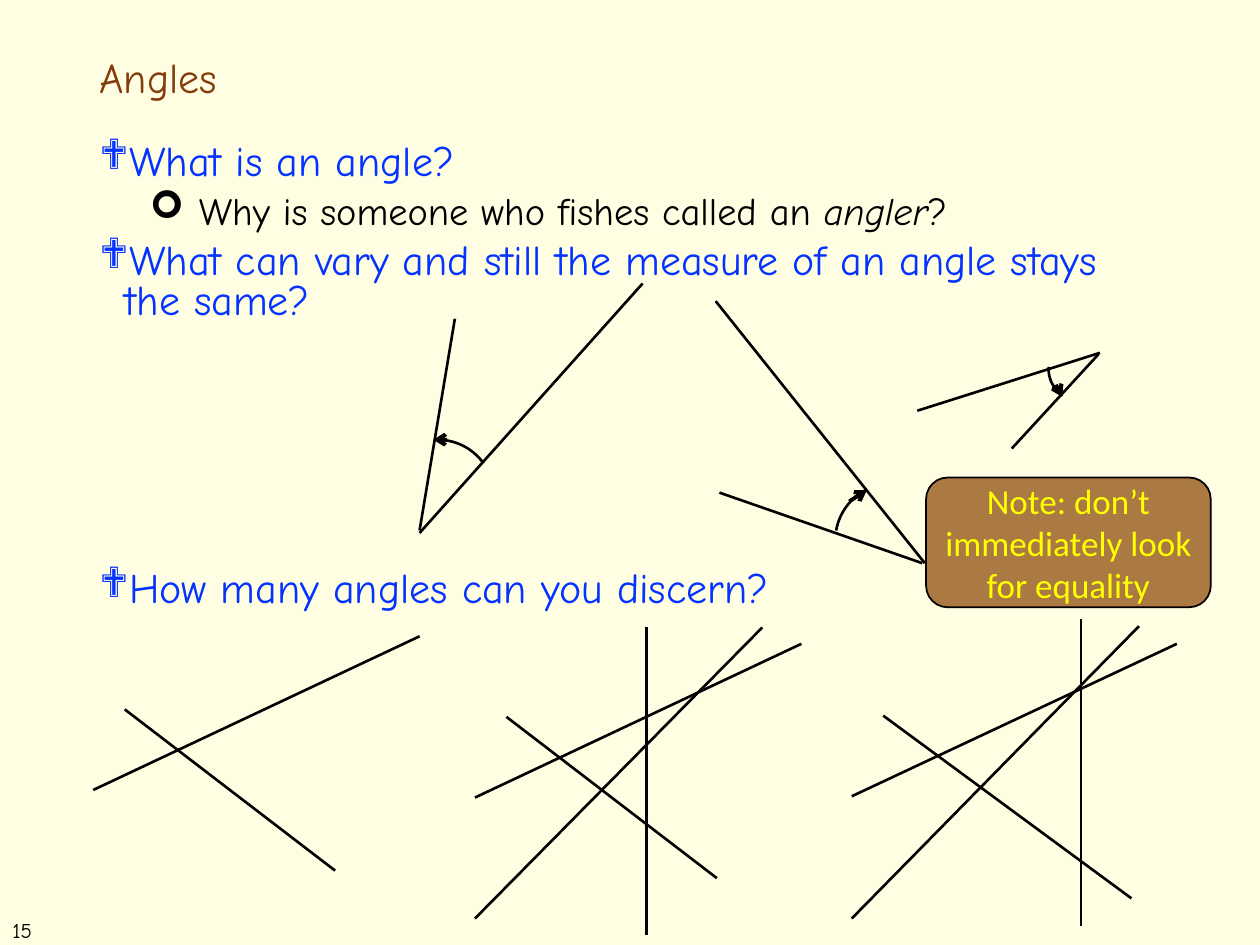
from lxml import etree
from pptx import Presentation
from pptx.dml.color import RGBColor
from pptx.enum.shapes import MSO_CONNECTOR, MSO_SHAPE
from pptx.enum.text import MSO_ANCHOR, PP_ALIGN
from pptx.oxml.ns import qn
from pptx.util import Inches, Pt

STRAIGHT = MSO_CONNECTOR.STRAIGHT
ARC, ROUNDED = MSO_SHAPE.ARC, MSO_SHAPE.ROUNDED_RECTANGLE
TOP, MIDDLE = MSO_ANCHOR.TOP, MSO_ANCHOR.MIDDLE
LEFT, CENTER = PP_ALIGN.LEFT, PP_ALIGN.CENTER

HAND_FONT, NOTE_FONT = "Comic Neue", "Calibri"
BLACK, BLUE, BROWN = "000000", "0432FF", "843C0B"
TAN, YELLOW, CREAM = "AB7942", "FFFF00", "FFFEE3"

# Each line is (x1, y1, x2, y2) in inches.
CROSSING_LINES = [
    [(0.74, 6.27, 3.33, 5.05), (0.99, 5.63, 2.66, 6.91)],
    [(3.77, 7.29, 6.05, 4.98), (3.77, 6.33, 6.36, 5.11),
     (4.02, 5.69, 5.69, 6.97), (5.13, 4.98, 5.13, 7.42)],
    [(6.76, 7.29, 9.04, 4.97), (6.76, 6.32, 9.34, 5.11),
     (7.01, 5.68, 8.98, 7.13), (8.58, 4.91, 8.58, 7.35)],
]

# Each angle is (rays, arc box, arc rotation, arrow line).
MARKED_ANGLES = [
    ([(3.33, 4.21, 3.61, 2.53), (3.33, 4.23, 5.1, 2.25)],
     (3.03, 3.49, 0.89, 0.89), 0, (3.47, 3.49, 3.44, 3.49)),
    ([(7.32, 4.47, 5.71, 3.91), (7.34, 4.47, 5.68, 2.39)],
     (6.63, 3.84, 0.89, 0.89), 279.7, (6.74, 3.98, 6.88, 3.89)),
    ([(8.72, 2.81, 8.03, 3.56), (8.73, 2.8, 7.28, 3.26)],
     (8.33, 2.64, 0.48, 0.53), 213.8, (8.42, 3.13, 8.43, 3.15)),
]


def color(hex_string):
    return RGBColor.from_string(hex_string)


def inches(values):
    return [Inches(value) for value in values]


def style_span(span, size, hex_string, font=HAND_FONT):
    span.font.size = Pt(size)
    span.font.name = font
    span.font.color.rgb = color(hex_string)


def add_line(shapes, ends, width=1.5, arrow=False):
    line = shapes.add_connector(STRAIGHT, *inches(ends))
    line.line.color.rgb = color(BLACK)
    line.line.width = Pt(width)
    if arrow:
        outline = line.line._get_or_add_ln()
        etree.SubElement(outline, qn("a:tailEnd"), type="arrow")
    etree.SubElement(line._element.spPr, qn("a:effectLst"))


def add_crossing_lines(page, lines):
    shapes = page.shapes.add_group_shape().shapes
    for ends in lines:
        add_line(shapes, ends)


def add_marked_angle(page, rays, arc_box, rotation, arrow):
    shapes = page.shapes.add_group_shape().shapes
    for ends in rays:
        add_line(shapes, ends)
    arc = shapes.add_shape(ARC, *inches(arc_box))
    arc.adjustments[0] = 162
    arc.adjustments[1] = 194.677
    arc.rotation = rotation
    arc.shadow.inherit = False
    arc.fill.background()
    arc.line.color.rgb = color(BLACK)
    arc.line.width = Pt(1.5)
    add_line(shapes, arrow, 2.25, arrow=True)


def add_text_box(page, place):
    box = page.shapes.add_textbox(*inches(place))
    box.text_frame.word_wrap = True
    box.text_frame.vertical_anchor = TOP
    return box.text_frame


def format_bullet(para, symbol, margin, spacing):
    para.line_spacing = spacing
    para.space_before = para.space_after = Pt(3)
    properties = para._p.get_or_add_pPr()
    properties.set("marL", str(Inches(margin)))
    properties.set("indent", str(Inches(-0.39)))
    etree.SubElement(properties, qn("a:buFont"), typeface="Wingdings")
    etree.SubElement(properties, qn("a:buChar"), char=symbol)


def write_question(para, text, spacing):
    para.text = text
    style_span(para.runs[0], 24, BLUE)
    format_bullet(para, "❖", 0.2, spacing)


def write_follow_up(para, parts):
    """Write a second-level bullet from (text, italic) parts."""
    para.level = 1
    for text, italic in parts:
        span = para.add_run()
        span.text = text
        style_span(span, 22, BLACK)
        span.font.italic = italic
    format_bullet(para, "➢", 0.79, 0.8)


def add_title(page, text):
    title = page.shapes.title
    title.left, title.top, title.width, title.height = inches((0.69, 0.4, 8.62, 0.47))
    title.text_frame.text = text
    title.text_frame.vertical_anchor = MIDDLE
    para = title.text_frame.paragraphs[0]
    para.alignment = LEFT
    para.line_spacing = 0.9
    style_span(para.runs[0], 24, BROWN)


def add_questions(page):
    frame = add_text_box(page, (0.69, 1.1, 8.62, 1.53))
    write_question(frame.paragraphs[0], "What is an angle?", 0.8)
    write_follow_up(frame.add_paragraph(), [
        ("Why is someone who fishes called an ", False),
        ("angler", True), ("?", False)])
    write_question(
        frame.add_paragraph(),
        "What can vary and still the measure of an angle stays the same?", 0.8)
    frame = add_text_box(page, (0.69, 4.45, 8.62, 0.71))
    write_question(frame.paragraphs[0], "How many angles can you discern?", 0.9)


def add_note(page, text):
    note = page.shapes.add_shape(ROUNDED, *inches((7.35, 3.79, 2.26, 1.03)))
    note.shadow.inherit = False
    note.fill.solid()
    note.fill.fore_color.rgb = color(TAN)
    note.line.color.rgb = color(BLACK)
    note.line.width = Pt(1)
    frame = note.text_frame
    frame.word_wrap = True
    frame.vertical_anchor = MIDDLE
    frame.text = text
    para = frame.paragraphs[0]
    para.alignment = CENTER
    style_span(para.runs[0], 20, YELLOW, NOTE_FONT)


def add_page_number(page, number):
    frame = add_text_box(page, (0, 7.23, 0.49, 0.3))
    frame.text = number
    style_span(frame.paragraphs[0].runs[0], 12, BLACK)


def main():
    deck = Presentation()
    deck.slide_width, deck.slide_height = Inches(10), Inches(7.5)
    page = deck.slides.add_slide(deck.slide_layouts.get_by_name("Title Only"))
    page.background.fill.solid()
    page.background.fill.fore_color.rgb = color(CREAM)

    add_page_number(page, "15")
    add_title(page, "Angles")
    add_questions(page)
    for lines in CROSSING_LINES:
        add_crossing_lines(page, lines)
    for angle in MARKED_ANGLES:
        add_marked_angle(page, *angle)
    add_note(page, "Note: don’t immediately look for equality")
    deck.save("out.pptx")


if __name__ == "__main__":
    main()
